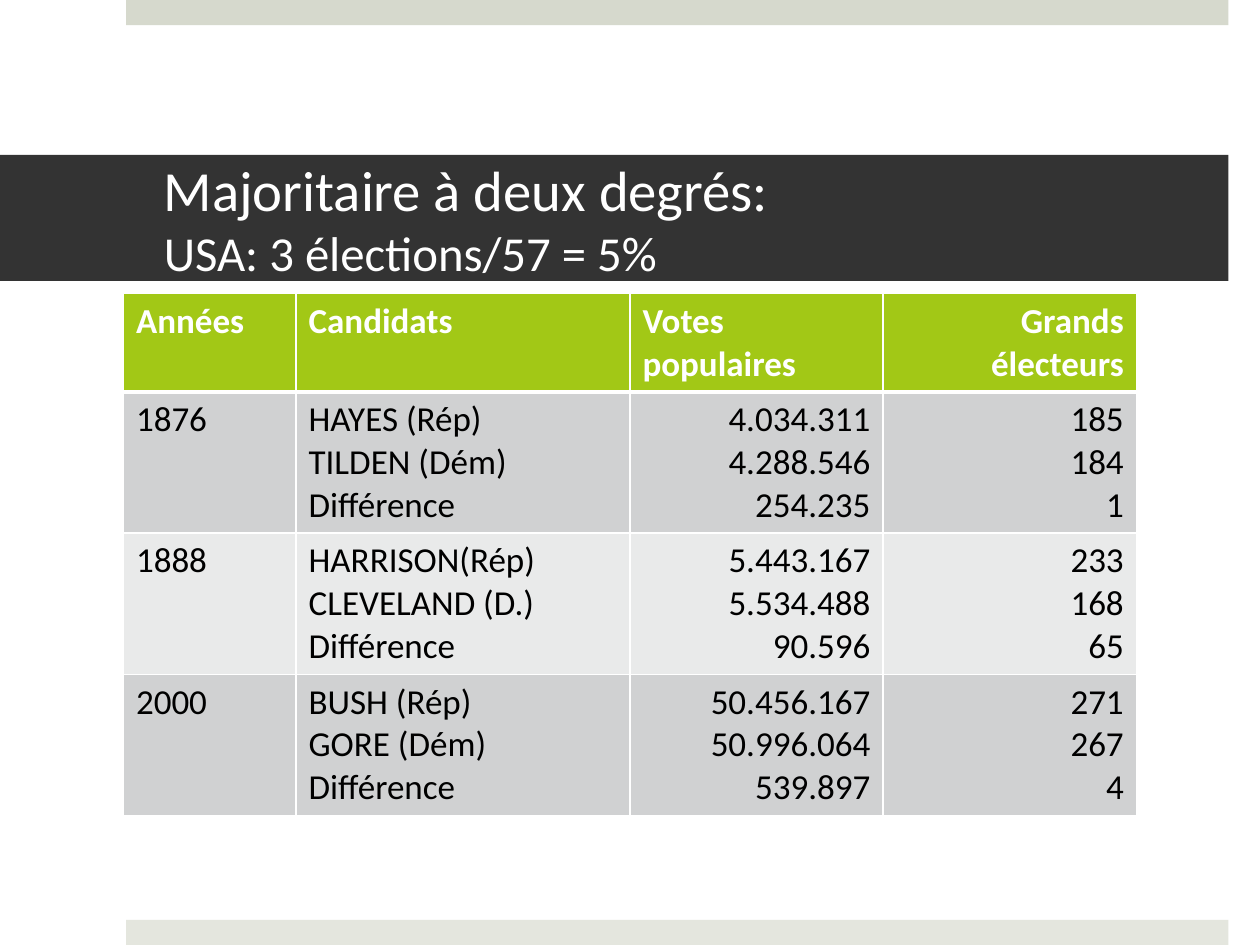
from lxml.etree import SubElement
from pptx import Presentation
from pptx.dml.color import RGBColor
from pptx.enum.shapes import MSO_SHAPE
from pptx.enum.text import MSO_ANCHOR, PP_ALIGN
from pptx.oxml.ns import qn
from pptx.util import Inches, Pt

COLORS = {
    "top_bar": "D6D9CD",
    "bottom_bar": "E4E6DE",
    "title_band": "333333",
    "header": "A2C816",
    "odd_row": "D0D1D2",
    "even_row": "E9EAEA",
    "white": "FFFFFF",
    "black": "000000",
}
FONT = "Calibri"


def add_band(left, top, width, height, color):
    shape = slide.shapes.add_shape(
        MSO_SHAPE.RECTANGLE, Inches(left), Inches(top), Inches(width), Inches(height))
    shape.shadow.inherit = False
    shape.fill.solid()
    shape.fill.fore_color.rgb = RGBColor.from_string(COLORS[color])
    shape.line.fill.background()
    return shape


def set_borders(cell, widths):
    """Draw white borders; widths in points for left, right, top, bottom."""
    properties = cell._tc.get_or_add_tcPr()
    for index, (side, width) in enumerate(zip(("lnL", "lnR", "lnT", "lnB"), widths)):
        line = properties.makeelement(qn(f"a:{side}"), {"w": str(Pt(width))})
        fill = SubElement(line, qn("a:solidFill"))
        SubElement(fill, qn("a:srgbClr"), val=COLORS["white"])
        properties.insert(index, line)


presentation = Presentation()
presentation.slide_width = Inches(10)
presentation.slide_height = Inches(7.5)
slide = presentation.slides.add_slide(presentation.slide_layouts[6])

add_band(1, 0, 8.75, 0.2, "top_bar")
add_band(1, 7.3, 8.75, 0.2, "bottom_bar")

# Title band
title = add_band(0, 1.23, 9.75, 1, "title_band")
frame = title.text_frame
frame.word_wrap = True
frame.vertical_anchor = MSO_ANCHOR.MIDDLE
frame.margin_left, frame.margin_right = Inches(1.3), Inches(0.3)
frame.margin_top = frame.margin_bottom = Inches(0.05)
paragraph = frame.paragraphs[0]
paragraph.alignment = PP_ALIGN.LEFT
paragraph.font.name = FONT
paragraph.font.color.rgb = RGBColor.from_string(COLORS["white"])
heading = paragraph.add_run()
heading.text = "Majoritaire à deux degrés: "
heading.font.size = Pt(32.4)
paragraph.add_line_break()
subheading = paragraph.add_run()
subheading.text = "USA: 3 élections/57 = 5%"
subheading.font.size = Pt(27.9)

# Election table: each line in a cell is its own paragraph
rows = [
    ("Années", "Candidats", "Votes populaires", "Grands électeurs"),
    ("1876", "HAYES (Rép)\nTILDEN (Dém)\nDifférence",
     "4.034.311\n4.288.546\n254.235", "185\n184\n1"),
    ("1888", "HARRISON(Rép)\nCLEVELAND (D.)\nDifférence",
     "5.443.167\n5.534.488\n90.596", "233\n168\n65"),
    ("2000", "BUSH (Rép)\nGORE (Dém)\nDifférence",
     "50.456.167\n50.996.064\n539.897", "271\n267\n4"),
]
column_widths = (1.37, 2.65, 2.01, 2.01)
row_heights = (0.77, 1.1, 1.1, 1.1)
table = slide.shapes.add_table(
    len(rows), len(column_widths), Inches(0.98), Inches(2.33),
    Inches(sum(column_widths)), Inches(sum(row_heights))).table
for column, width in zip(table.columns, column_widths):
    column.width = Inches(width)

for row_index, texts in enumerate(rows):
    table.rows[row_index].height = Inches(row_heights[row_index])
    is_header = row_index == 0
    fill_color = "header" if is_header else "odd_row" if row_index % 2 else "even_row"
    for column_index, text in enumerate(texts):
        cell = table.cell(row_index, column_index)
        cell.text = text
        cell.fill.solid()
        cell.fill.fore_color.rgb = RGBColor.from_string(COLORS[fill_color])
        set_borders(cell, (1, 1, 3 if row_index == 1 else 1, 3 if is_header else 1))
        align_right = column_index == 3 or (column_index == 2 and not is_header)
        for paragraph in cell.text_frame.paragraphs:
            paragraph.alignment = PP_ALIGN.RIGHT if align_right else PP_ALIGN.LEFT
            paragraph.font.name = FONT
            paragraph.font.size = Pt(20)
            paragraph.font.bold = is_header
            paragraph.font.color.rgb = RGBColor.from_string(
                COLORS["white" if is_header else "black"])

presentation.save("out.pptx")
